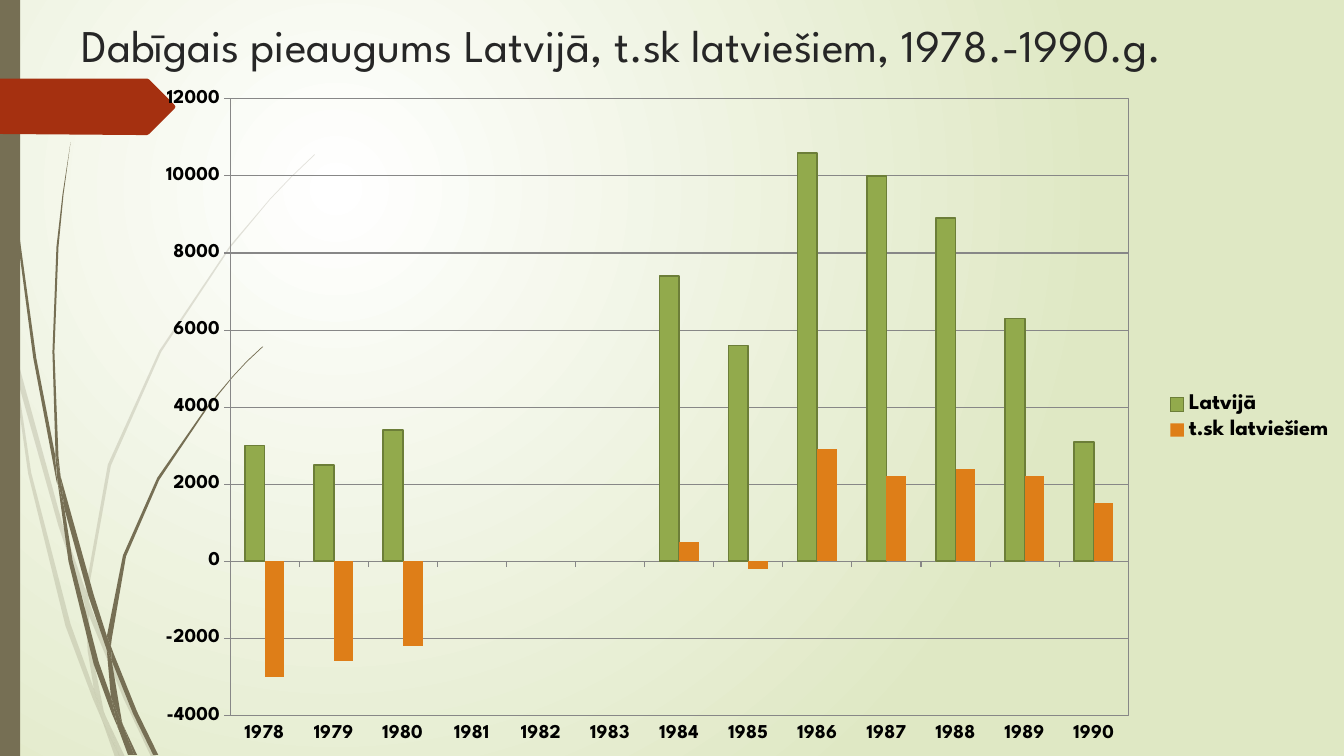
from pptx import Presentation
from pptx import util as u
from pptx import oxml
from pptx.chart.data import CategoryChartData
from pptx.dml.color import RGBColor
from pptx.enum import chart as ch
from pptx.enum import shapes, text

FONT = "League Spartan"
COLS, ROWS = 1333, 750          # grid cells, each 0.01 inch
CELL = u.Inches(0.01)
A_NS = 'xmlns:a="http://schemas.openxmlformats.org/drawingml/2006/main"'
C_NS = 'xmlns:c="http://schemas.openxmlformats.org/drawingml/2006/chart"'
STEM, RED, INK, GRID = "766F54", "A53010", "262626", "878787"


def rgb(code):
    return RGBColor.from_string(code)


def cells(*counts):
    return [u.Emu(int(n * CELL)) for n in counts]


class Page:
    """Holds the style and the slide being filled."""

    def __init__(self, slide):
        self.slide = slide

    def background(self, inner, outer):
        fill = self.slide.background.fill
        fill.gradient()
        for stop, color, at in zip(fill.gradient_stops, (inner, outer), (0, 1)):
            stop.color.rgb = rgb(color)
            stop.position = at
        gradient = self.slide.element.xpath(".//a:gradFill")[0]
        for linear in gradient.xpath("a:lin"):
            gradient.remove(linear)
        gradient.append(oxml.parse_xml(
            f'<a:path {A_NS} path="circle"><a:fillToRect '
            'l="50000" t="50000" r="100000" b="100000"/></a:path>'))

    def paint(self, shape, color, opacity=100):
        shape.shadow.inherit = False
        shape.fill.solid()
        shape.fill.fore_color.rgb = rgb(color)
        shape.line.fill.background()
        if opacity < 100:
            shape.fill._xPr.xpath("a:solidFill/a:srgbClr")[0].append(
                oxml.parse_xml(f'<a:alpha {A_NS} val="{opacity * 1000}"/>'))

    def outline(self, points, color, opacity=100, parent=None):
        start, *rest = [cells(*point) for point in points]
        builder = (parent or self.slide).shapes.build_freeform(*start)
        builder.add_line_segments(rest, close=True)
        self.paint(builder.convert_to_shape(), color, opacity)

    def wisps(self, outlines, color, opacity=100):
        group = self.slide.shapes.add_group_shape()
        for points in outlines:
            self.outline(points, color, opacity, group)

    def bar(self, box, color):
        self.paint(self.slide.shapes.add_shape(
            shapes.MSO_SHAPE.RECTANGLE, *cells(*box)), color)

    def style(self, font, size, color, bold=False):
        font.name, font.size, font.bold = FONT, u.Pt(size), bold
        font.color.rgb = rgb(color)

    def title(self, box, words, size):
        frame = self.slide.shapes.add_textbox(*cells(*box)).text_frame
        frame.word_wrap = True
        frame.vertical_anchor = text.MSO_ANCHOR.MIDDLE
        frame.text = words
        self.style(frame.paragraphs[0].runs[0].font, size, INK)

    def columns(self, box, years, series, plot):
        data = CategoryChartData()
        data.categories = years
        for name, values, *_ in series:
            data.add_series(name, values)
        chart = self.slide.shapes.add_chart(
            ch.XL_CHART_TYPE.COLUMN_CLUSTERED, *cells(*box), data).chart
        chart.has_title = False
        self.style(chart.font, 14, "000000", True)

        # Legend
        chart.has_legend = True
        chart.legend.position = ch.XL_LEGEND_POSITION.RIGHT
        chart.legend.include_in_layout = False
        self.style(chart.legend.font, 16, "000000", True)

        # Axes and gridlines
        years_axis, growth_axis = chart.category_axis, chart.value_axis
        years_axis.tick_label_position = ch.XL_TICK_LABEL_POSITION.LOW
        growth_axis.minimum_scale, growth_axis.maximum_scale = -4000, 12000
        growth_axis.major_unit = 2000
        growth_axis.has_major_gridlines = True
        growth_axis.tick_labels.number_format = "General"
        growth_axis.tick_labels.number_format_is_linked = False
        for axis in (years_axis, growth_axis):
            axis.major_tick_mark = ch.XL_TICK_MARK.OUTSIDE
        for ruled in (years_axis, growth_axis, growth_axis.major_gridlines):
            ruled.format.line.color.rgb = rgb(GRID)
            ruled.format.line.width = u.Pt(0.75)

        # Columns
        bars = chart.plots[0]
        bars.gap_width, bars.overlap, bars.vary_by_categories = 150, 0, False
        for column, (_, _, color, edge) in zip(bars.series, series):
            column.invert_if_negative = False
            column.format.fill.solid()
            column.format.fill.fore_color.rgb = rgb(color)
            if edge:
                column.format.line.color.rgb = rgb(edge)
                column.format.line.width = u.Pt(1.25)

        # Plot area position and frame
        area = chart.element.xpath("c:chart/c:plotArea")[0]
        for layout in area.xpath("c:layout"):
            area.remove(layout)
        shares = "".join(f'<c:{key} val="{share}"/>' for key, share in zip("xywh", plot))
        area.insert(0, oxml.parse_xml(
            f'<c:layout {C_NS}><c:manualLayout><c:layoutTarget val="inner"/>'
            f'<c:xMode val="edge"/><c:yMode val="edge"/>{shares}</c:manualLayout></c:layout>'))
        area.append(oxml.parse_xml(
            f'<c:spPr {C_NS} {A_NS}><a:noFill/><a:ln w="9525"><a:solidFill>'
            f'<a:srgbClr val="{GRID}"/></a:solidFill></a:ln></c:spPr>'))


# Outlines in grid cells
PALE_WISPS = [
    [(11, 350), (9, 322), (0, 282), (0, 299), (10, 344)],
    [(58, 522), (84, 599), (85, 586), (62, 520), (14, 345), (17, 376)],
    [(92, 607), (88, 596), (88, 610), (123, 694), (150, 751), (155, 751), (127, 692)],
    [(119, 751), (124, 751), (105, 711)],
    [(93, 683), (70, 619), (31, 469), (17, 376), (11, 350), (28, 470), (65, 621),
     (92, 693), (101, 714), (99, 707)],
    [(84, 599), (87, 646), (93, 683), (96, 692), (105, 711), (103, 706), (91, 646),
     (88, 610), (88, 608)],
    [(88, 584), (110, 462), (160, 349), (229, 245), (268, 198), (290, 175), (312, 154),
     (312, 153), (289, 175), (268, 197), (228, 244), (158, 348), (107, 461), (85, 584),
     (85, 586), (88, 596)],
    [(101, 714), (114, 751), (119, 751)],
    [(88, 608), (88, 610), (88, 596), (85, 586), (84, 599)],
    [(96, 692), (93, 683), (99, 707), (101, 714), (119, 751), (105, 711)],
]
DARK_WISPS = [
    [(7, 110), (17, 233), (33, 355), (56, 477), (57, 481), (55, 457), (55, 453),
     (36, 355), (19, 232), (8, 109), (5, 48), (4, 0), (3, 0), (4, 48)],
    [(88, 592), (106, 645), (106, 633), (106, 631), (93, 590), (60, 472), (64, 505)],
    [(113, 649), (110, 641), (111, 656), (132, 708), (152, 749), (157, 749), (136, 706)],
    [(110, 691), (98, 657), (72, 556), (64, 505), (57, 477), (68, 557), (93, 659),
     (111, 708), (117, 722), (116, 717)],
    [(60, 472), (58, 453), (54, 349), (58, 245), (63, 193), (70, 141), (62, 193),
     (56, 245), (52, 349), (55, 449)],
    [(133, 749), (136, 749), (122, 719)],
    [(57, 477), (64, 505), (60, 472), (55, 449), (55, 453)],
    [(111, 633), (125, 552), (158, 476), (205, 406), (231, 374), (245, 359), (261, 344),
     (260, 344), (245, 358), (231, 373), (204, 405), (156, 474), (122, 551), (106, 631),
     (110, 641)],
    [(117, 722), (127, 749), (131, 749)],
    [(106, 645), (110, 691), (116, 706), (122, 719), (121, 716), (111, 656), (109, 651)],
    [(106, 645), (109, 651), (111, 656), (110, 641), (106, 631), (106, 633)],
    [(116, 706), (110, 691), (116, 717), (117, 722), (130, 749), (133, 749), (122, 719)],
]
ARROW = [(0, 78), (146, 78), (148, 79), (173, 104), (174, 106), (173, 108),
         (148, 133), (146, 134), (136, 134), (0, 133)]

# Natural increase by year
YEARS = [str(year) for year in range(1978, 1991)]
GAP = [None] * 3
LATVIA = [3000, 2500, 3400, *GAP, 7400, 5600, 10600, 10000, 8900, 6300, 3100]
LATVIANS = [-3000, -2600, -2200, *GAP, 500, -200, 2900, 2200, 2400, 2200, 1500]


def main():
    deck = Presentation()
    deck.slide_width, deck.slide_height = cells(COLS, ROWS)
    page = Page(deck.slides.add_slide(deck.slide_layouts[6]))

    # Backdrop
    page.background("FFFFFF", "DFE8C4")
    page.wisps(PALE_WISPS, STEM, 20)
    page.wisps(DARK_WISPS, STEM)
    page.bar((0, 0, 20, ROWS), STEM)
    page.outline(ARROW, RED)

    # Title and chart
    page.title((71, 0, 1262, 88),
               "Dabīgais pieaugums Latvijā, t.sk latviešiem, 1978.-1990.g.", 32.4)
    page.columns((145, 78, 1188, ROWS - 78), YEARS,
                 [("Latvijā", LATVIA, "92AA4C", "6C7E38"),
                  ("t.sk latviešiem", LATVIANS, "DE7E18", None)],
                 plot=(0.07, 0.03, 0.75, 0.91))
    deck.save("out.pptx")


if __name__ == "__main__":
    main()
